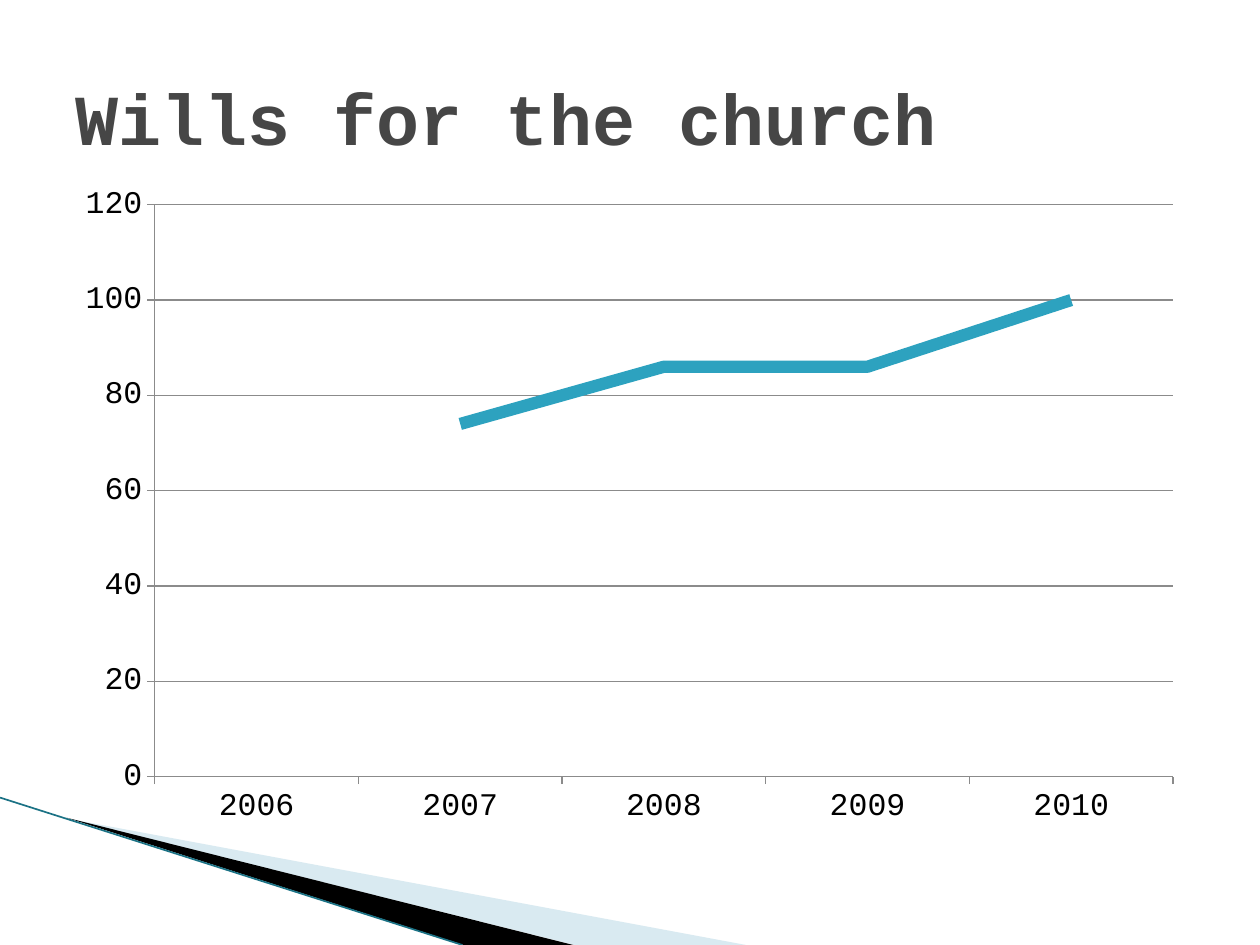
from typing import NamedTuple

from lxml import etree
from pptx import Presentation
from pptx import util as u
from pptx.chart.data import CategoryChartData
from pptx.dml.color import RGBColor
from pptx.enum import chart as ch, shapes, text
from pptx.oxml.ns import qn

W, H = 10, 7.5
FONT = "Courier New"
BLACK = RGBColor(0, 0, 0)
CHARCOAL = RGBColor(0x46, 0x46, 0x46)
GREY = RGBColor(0x8B, 0x8B, 0x8B)
TEAL = RGBColor(0x2D, 0xA2, 0xBF)
DARK_TEAL = RGBColor(0x1B, 0x72, 0x85)
PALE_BLUE = RGBColor(0xA0, 0xCB, 0xDC)


class Wedge(NamedTuple):
    points: tuple[tuple[float, float], ...]
    color: RGBColor
    opacity: int = 100


class Box(NamedTuple):
    """Left, top, width and height as shares of the containing area."""
    x: float
    y: float
    w: float
    h: float

    def on_slide(self) -> tuple[int, ...]:
        return tuple(u.Inches(share * side) for share, side in zip(self, (W, H, W, H)))


WEDGES = (
    Wedge(((0.55, 6.5), (5.92, H), (4.56, H)), PALE_BLUE, 40),
    Wedge(((0.53, 6.49), (4.55, H), (3.68, H)), BLACK),
)
TITLE = Box(0.05, 0.04, 0.9, 1 / 6)
CHART = Box(0.051, 0.185, 0.898, 0.704)
PLOT = Box(0.08, 0.045, 0.9, 0.86)


def draw_wedge(slide, wedge: Wedge) -> None:
    (x, y), *rest = wedge.points
    builder = slide.shapes.build_freeform(u.Inches(x), u.Inches(y))
    builder.add_line_segments([(u.Inches(px), u.Inches(py)) for px, py in rest])
    sp = builder.convert_to_shape()
    sp.shadow.inherit = False
    sp.fill.solid()
    sp.fill.fore_color.rgb = wedge.color
    sp.line.fill.background()
    if wedge.opacity < 100:
        color = sp.fill._xPr.find(".//" + qn("a:srgbClr"))
        etree.SubElement(color, qn("a:alpha"), val=str(wedge.opacity * 1000))


def draw_edge(slide) -> None:
    line = slide.shapes.add_connector(
        shapes.MSO_CONNECTOR.STRAIGHT,
        0, u.Inches(6.33), u.Inches(3.67), u.Inches(H))
    line.line.color.rgb = DARK_TEAL
    line.line.width = u.Pt(0.95)
    etree.SubElement(line._element.spPr, qn("a:effectLst"))


def format_font(font, *, size: float, color: RGBColor = BLACK, bold: bool = False) -> None:
    font.name = FONT
    font.size = u.Pt(size)
    font.color.rgb = color
    font.bold = bold


def write(sp, words: str, **font_format) -> None:
    tf = sp.text_frame
    tf.word_wrap = True
    tf.vertical_anchor = text.MSO_ANCHOR.MIDDLE
    p = tf.paragraphs[0]
    p.alignment = text.PP_ALIGN.LEFT
    r = p.add_run()
    r.text = words
    format_font(r.font, **font_format)


def place_plot(chart, box: Box) -> None:
    """Fix the inner plot area within the chart."""
    area = chart._chartSpace.find(".//" + qn("c:plotArea"))
    layout = area.find(qn("c:layout"))
    if layout is None:
        layout = etree.Element(qn("c:layout"))
        area.insert(0, layout)
    manual = etree.SubElement(layout, qn("c:manualLayout"))
    settings = {"layoutTarget": "inner", "xMode": "edge", "yMode": "edge", **box._asdict()}
    for tag, value in settings.items():
        etree.SubElement(manual, qn(f"c:{tag}"), val=str(value))


def draw_chart(slide) -> None:
    data = CategoryChartData()
    data.categories = ["2006", "2007", "2008", "2009", "2010"]
    data.add_series("Series 1", (None, 74, 86, 86, 100))
    chart = slide.shapes.add_chart(
        ch.XL_CHART_TYPE.LINE, *CHART.on_slide(), data).chart
    chart.has_legend = False
    chart.has_title = False
    format_font(chart.font, size=10)
    place_plot(chart, PLOT)

    plot = chart.plots[0]
    plot.vary_by_categories = False
    series = plot.series[0]
    series.smooth = False
    series.marker.style = ch.XL_MARKER_STYLE.NONE
    series.format.line.color.rgb = TEAL
    series.format.line.width = u.Pt(7)

    values = chart.value_axis
    values.minimum_scale, values.maximum_scale, values.major_unit = 0, 120, 20
    values.has_major_gridlines = True
    for axis in (chart.category_axis, values):
        axis.major_tick_mark = ch.XL_TICK_MARK.OUTSIDE
        format_font(axis.tick_labels.font, size=18)
    for part in (chart.category_axis, values, values.major_gridlines):
        part.format.line.color.rgb = GREY
        part.format.line.width = u.Pt(0.75)


def main() -> None:
    prs = Presentation()
    prs.slide_width, prs.slide_height = u.Inches(W), u.Inches(H)
    slide = prs.slides.add_slide(prs.slide_layouts[5])
    for wedge in WEDGES:
        draw_wedge(slide, wedge)
    draw_edge(slide)

    title = slide.shapes.title
    title.left, title.top, title.width, title.height = TITLE.on_slide()
    write(title, "Wills for the church", size=41, color=CHARCOAL, bold=True)
    slide.shapes._spTree.append(title._element)  # in front of the wedges

    draw_chart(slide)
    prs.save("out.pptx")


if __name__ == "__main__":
    main()
